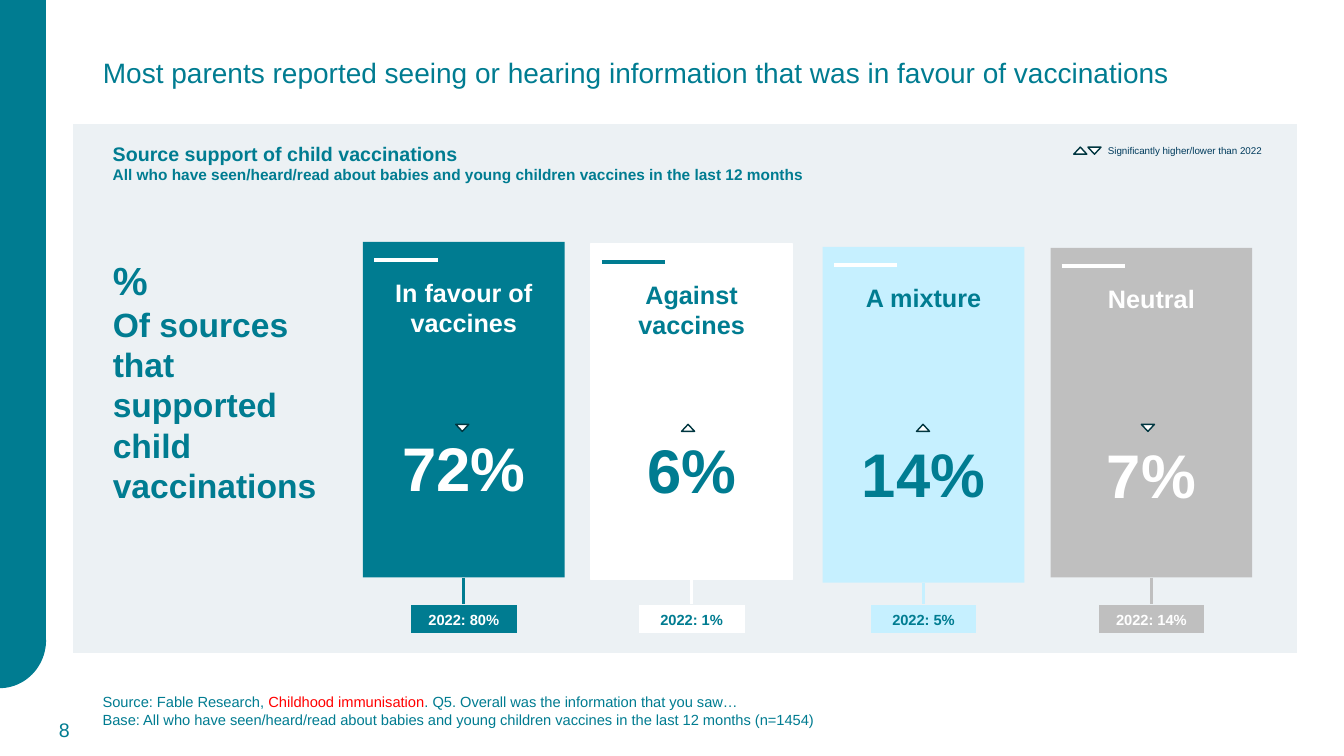
from lxml import etree
from pptx import Presentation
from pptx import util as u
from pptx.dml.color import RGBColor
from pptx.enum import shapes, text
from pptx.oxml.ns import qn

TEAL, WHITE, PANEL = "007C91", "FFFFFF", "ECF1F4"
PALE, GREY, NAVY = "C6F0FF", "BFBFBF", "003640"
LEFT, CENTER, RIGHT = text.PP_ALIGN.LEFT, text.PP_ALIGN.CENTER, text.PP_ALIGN.RIGHT
TOP, MIDDLE = text.MSO_ANCHOR.TOP, text.MSO_ANCHOR.MIDDLE
RECT = shapes.MSO_SHAPE.RECTANGLE


def color(hex_string):
    return RGBColor.from_string(hex_string)


def write(p, content, size=18, fill=TEAL, bold=False, align=LEFT, before=0, spacing=None):
    p.alignment = align
    p.space_before = u.Pt(before)
    if spacing:
        p.line_spacing = spacing
    r = p.add_run()
    r.text = content
    r.font.name = "Arial"
    r.font.size = u.Pt(size)
    r.font.bold = bold
    r.font.color.rgb = color(fill)


def frame(sp, anchor=MIDDLE, wrap=True, top=0.05, bottom=0.05):
    tf = sp.text_frame
    tf.word_wrap = wrap
    tf.vertical_anchor = anchor
    tf.margin_top, tf.margin_bottom = u.Inches(top), u.Inches(bottom)
    return tf


def add_box(s, x, y, w, h, **kwargs):
    return frame(s.shapes.add_textbox(*map(u.Inches, (x, y, w, h))), **kwargs)


def add_shape(s, kind, x, y, w, h, fill, line=None, weight=1.0, rotation=0):
    sp = s.shapes.add_shape(kind, *map(u.Inches, (x, y, w, h)))
    sp.shadow.inherit = False
    sp.rotation = rotation
    sp.fill.solid()
    sp.fill.fore_color.rgb = color(fill)
    if line:
        sp.line.color.rgb = color(line)
        sp.line.width = u.Pt(weight)
    else:
        sp.line.fill.background()
    return sp


def add_line(s, x1, y1, x2, y2, line, weight):
    cx = s.shapes.add_connector(shapes.MSO_CONNECTOR.STRAIGHT, *map(u.Inches, (x1, y1, x2, y2)))
    cx.line.color.rgb = color(line)
    cx.line.width = u.Pt(weight)
    etree.SubElement(cx._element.spPr, qn("a:effectLst"))
    return cx


def add_marker(s, x, y, up):
    add_shape(s, shapes.MSO_SHAPE.ISOSCELES_TRIANGLE, x, y, 0.13, 0.07, WHITE, NAVY,
              rotation=0 if up else 180)


def add_card(s, x, y, h, label, value, before, gap, fill, ink, dash, border, marker_x, up):
    card = add_shape(s, RECT, x, y, 2, h, fill, border)
    tf = frame(card, TOP, top=0.35)
    write(tf.paragraphs[0], label, 18, ink, True, CENTER)
    write(tf.add_paragraph(), value, 44, ink, True, CENTER, before=gap)
    add_line(s, x + 0.11, y + 0.18, x + 0.74, y + 0.18, dash, 3)

    tag = add_shape(s, RECT, x + 0.46, 5.99, 1.08, 0.31, fill, PANEL, 2.25)
    write(frame(tag).paragraphs[0], before, 10.5, ink, True, CENTER)
    stem = add_line(s, x + 1, y + h, x + 1, 5.99, fill, 2.25)
    stem.begin_connect(card, 2)
    stem.end_connect(tag, 0)
    add_marker(s, marker_x, 4.21, up)


def add_side_band(s):
    add_shape(s, RECT, 0, 0, 0.45, 6.35, TEAL, TEAL)
    corner = add_shape(s, shapes.MSO_SHAPE.PIE, -0.46, 5.88, 0.91, 0.94, TEAL, TEAL, rotation=180)
    corner.adjustments[0] = 108
    corner.adjustments[1] = 162


def add_title(s, content):
    title = s.shapes.title
    title.left, title.top, title.width, title.height = map(u.Inches, (0.92, 0.01, 11.5, 1.45))
    write(frame(title).paragraphs[0], content, 20, spacing=0.9)


def add_footer(s):
    tf = add_box(s, 0.92, 6.85, 11.6, 0.4)
    p = tf.paragraphs[0]
    write(p, "Source: Fable Research, ", 10.5)
    write(p, "Childhood immunisation", 10.5, "FF0000")
    write(p, ". Q5. Overall was the information that you saw…", 10.5)
    write(tf.add_paragraph(), "Base: All who have seen/heard/read about babies and young children "
          "vaccines in the last 12 months (n=1454)", 10.5)
    write(add_box(s, 0.14, 7.04, 0.65, 0.4).paragraphs[0], "8", 14, align=RIGHT)


def add_headings(s):
    tf = add_box(s, 1.02, 1.36, 7.13, 0.52, anchor=TOP, wrap=False)
    write(tf.paragraphs[0], "Source support of child vaccinations", 14, bold=True)
    write(tf.add_paragraph(), "All who have seen/heard/read about babies and young children "
          "vaccines in the last 12 months", 11, bold=True)

    tf = add_box(s, 1.02, 2.48, 2.39, 3, bottom=0.45)
    write(tf.paragraphs[0], "%", 28, bold=True)
    write(tf.add_paragraph(), "Of sources that supported child vaccinations", 24, bold=True)


def add_legend(s):
    add_marker(s, 10.65, 1.46, True)
    add_marker(s, 10.79, 1.46, False)
    tf = add_box(s, 10.89, 1.39, 2.04, 0.22, anchor=TOP)
    write(tf.paragraphs[0], "Significantly higher/lower than 2022", 7, "003B5C")


def main():
    prs = Presentation()
    prs.slide_width, prs.slide_height = u.Inches(13.33), u.Inches(7.5)
    s = prs.slides.add_slide(prs.slide_layouts[5])
    add_side_band(s)
    add_title(s, "Most parents reported seeing or hearing information that was in favour of vaccinations")
    add_footer(s)
    add_shape(s, RECT, 0.71, 1.22, 12.17, 5.27, PANEL, WHITE, 1.5)
    add_headings(s)
    add_legend(s)

    cards = [
        (3.6, 2.4, 3.33, "In favour of vaccines", "72%", "2022: 80%", 66, TEAL, WHITE, WHITE, None, 4.52, False),
        (5.86, 2.42, 3.33, "Against vaccines", "6%", "2022: 1%", 66, WHITE, TEAL, TEAL, WHITE, 6.76, True),
        (8.16, 2.45, 3.33, "A mixture", "14%", "2022: 5%", 88, PALE, TEAL, WHITE, None, 9.09, True),
        (10.42, 2.46, 3.27, "Neutral", "7%", "2022: 14%", 88, GREY, WHITE, WHITE, None, 11.32, False),
    ]
    for card in cards:
        add_card(s, *card)
    prs.save("out.pptx")


if __name__ == "__main__":
    main()
